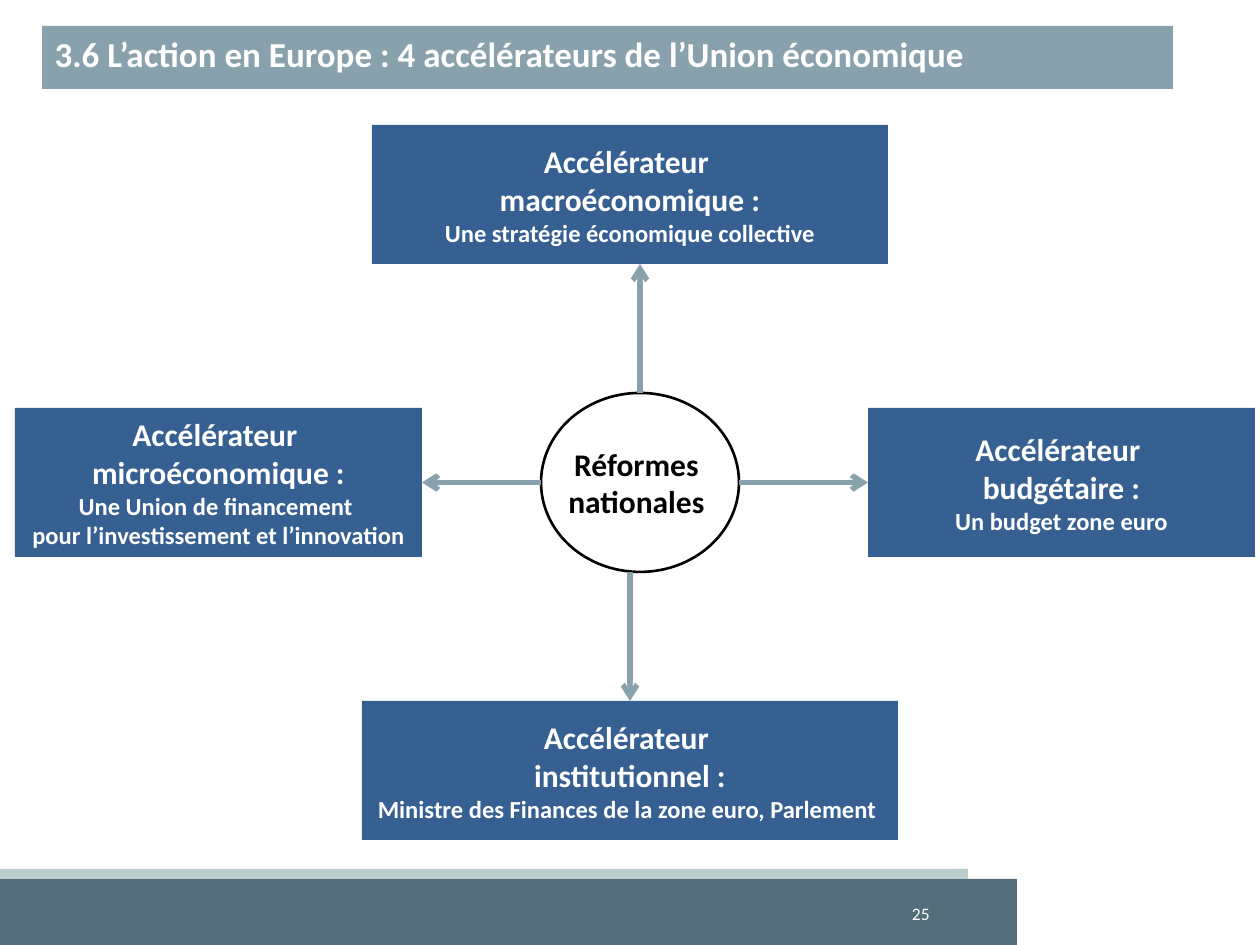
"""Build the slide on the four accelerators of the economic union."""
from lxml import etree
from pptx import Presentation
from pptx import util as u
from pptx.dml.color import RGBColor
from pptx.enum import shapes, text
from pptx.oxml import ns

PX = 914400 / 126
BLUE, GREY, WHITE, BLACK = "376092", "88A1AD", "FFFFFF", "000000"
MID, LEFT = text.PP_ALIGN.CENTER, text.PP_ALIGN.LEFT
RECT = shapes.MSO_SHAPE.RECTANGLE


def paint(obj, hue):
    obj.solid()
    obj.fore_color.rgb = RGBColor.from_string(hue)


def write(shape, lines, hue, bold=True, align=MID, wrap=False, anchor=text.MSO_ANCHOR.MIDDLE):
    frame = shape.text_frame
    frame.word_wrap = wrap
    frame.auto_size = text.MSO_AUTO_SIZE.NONE
    frame.vertical_anchor = anchor
    for i, (words, size) in enumerate(lines):
        para = frame.add_paragraph() if i else frame.paragraphs[0]
        para.alignment = align
        run = para.add_run()
        run.text = words
        run.font.name = "Calibri"
        run.font.size = u.Pt(size)
        run.font.bold = bold
        run.font.color.rgb = RGBColor.from_string(hue)


deck = Presentation()
deck.slide_width, deck.slide_height = u.Inches(10), u.Inches(7.5)
slide = deck.slides.add_slide(deck.slide_layouts[5])
tree = slide.shapes

title = tree.title
title.left, title.top, title.width, title.height = [int(n * PX) for n in (42, 26, 1131, 63)]
paint(title.fill, GREY)
write(title, [("3.6 L’action en Europe : 4 accélérateurs de l’Union économique", 20)],
      WHITE, align=LEFT, wrap=True, anchor=text.MSO_ANCHOR.TOP)

nodes = {
    "foot": (RECT, (0, 879, 1017, 66), "546D7A", []),
    "band": (RECT, (0, 869, 968, 10), "BACECE", []),
    "hub": (shapes.MSO_SHAPE.FLOWCHART_CONNECTOR, (541, 393, 198, 179), WHITE,
            [("Réformes ", 18), ("nationales ", 18)]),
    "macro": (RECT, (372, 125, 516, 139), BLUE,
              [("Accélérateur ", 18), ("macroéconomique :", 18),
               ("Une stratégie économique collective", 14)]),
    "budget": (RECT, (868, 408, 387, 149), BLUE,
               [("Accélérateur ", 18), ("budgétaire :", 18), ("Un budget zone euro", 14)]),
    "instit": (RECT, (362, 701, 536, 139), BLUE,
               [("Accélérateur ", 18), ("institutionnel :", 18),
                ("Ministre des Finances de la zone euro, Parlement ", 14)]),
    "micro": (RECT, (15, 408, 407, 149), BLUE,
              [("Accélérateur ", 18), ("microéconomique :", 18),
               ("Une Union de financement ", 14),
               ("pour l’investissement et l’innovation", 14)]),
}
made = {}
for name, (kind, box, fill, lines) in nodes.items():
    node = made[name] = tree.add_shape(kind, *[int(n * PX) for n in box])
    node.shadow.inherit = False
    paint(node.fill, fill)
    node.line.fill.background()
    write(node, lines, BLACK if name == "hub" else WHITE)

rim = made["hub"].line
paint(rim.fill, BLACK)
rim.width = u.Pt(1.5)

arrows = [
    ((541, 482, 422, 482), "micro", 3),
    ((640, 393, 640, 264), None, None),
    ((739, 482, 868, 482), "budget", 1),
    ((630, 572, 630, 701), "instit", 0),
]
for ends, goal, side in arrows:
    arrow = tree.add_connector(shapes.MSO_CONNECTOR.STRAIGHT, *[int(n * PX) for n in ends])
    if goal:
        arrow.end_connect(made[goal], side)
        if side:
            arrow.begin_y = arrow.end_y
        else:
            arrow.begin_x = arrow.end_x
    paint(arrow.line.fill, GREY)
    arrow.line.width = u.Pt(3)
    etree.SubElement(arrow.line._get_or_add_ln(), ns.qn("a:tailEnd"), type="arrow")
    etree.SubElement(arrow._element.spPr, ns.qn("a:effectLst"))

page = tree.add_textbox(*[int(n * PX) for n in (806, 892, 136, 42)])
write(page, [("25", 10)], WHITE, bold=False, align=text.PP_ALIGN.RIGHT, wrap=True)

deck.save("out.pptx")
